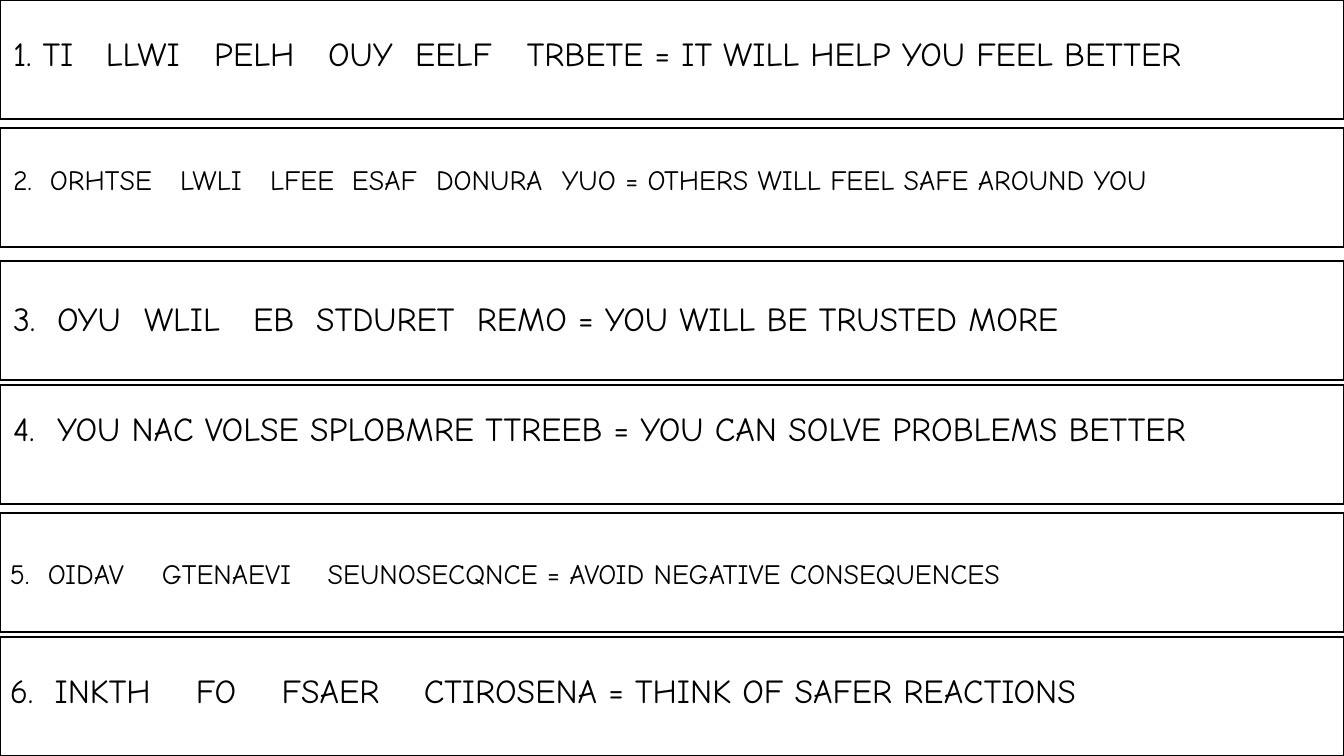
from dataclasses import dataclass

from lxml import etree
from pptx import Presentation
from pptx.dml.color import RGBColor
from pptx.enum.shapes import MSO_SHAPE
from pptx.enum.text import MSO_AUTO_SIZE
from pptx.oxml.ns import qn
from pptx.util import Cm, Pt

RECTANGLE = MSO_SHAPE.RECTANGLE
GROW_TO_FIT = MSO_AUTO_SIZE.SHAPE_TO_FIT_TEXT


@dataclass(frozen=True)
class Theme:
    font: str = "Comic Neue"
    ink: RGBColor = RGBColor(0x00, 0x00, 0x00)
    paper: RGBColor = RGBColor(0xFF, 0xFF, 0xFF)
    large: Pt = Pt(24)
    small: Pt = Pt(20)
    border: Pt = Pt(1)


theme = Theme()
SLIDE_WIDTH, SLIDE_HEIGHT = Cm(33.87), Cm(19.05)
STRIP_HEIGHT = Cm(3)
TEXT_HEIGHT = Cm(1.27)

# Each row: strip top, text left, text top, type size, tab stops (cm), text
ROWS = [
    (0, 0.08, 0.71, theme.large, [2.34, 5.07, 7.94, 10.13, 12.95],
     "1. TI\tLLWI\tPELH\tOUY\tEELF\tTRBETE = IT WILL HELP YOU FEEL BETTER"),
    (3.23, 0.08, 3.97, theme.small, [0.93, 4.21, 6.48, 8.54, 10.66, 13.83],
     "2.\tORHTSE\tLWLI\tLFEE\tESAF\tDONURA\tYUO = OTHERS WILL FEEL SAFE AROUND YOU"),
    (6.58, 0.08, 7.37, theme.large, [1.11, 3.3, 6.05, 7.64, 11.69],
     "3.\tOYU\tWLIL\tEB\tSTDURET\tREMO = YOU WILL BE TRUSTED MORE"),
    (9.7, 0.08, 10.16, theme.large, [1.11],
     "4.\tYOU NAC VOLSE SPLOBMRE TTREEB = YOU CAN SOLVE PROBLEMS BETTER"),
    (12.93, 0, 13.9, theme.small, [0.96, 3.83, 8.01],
     "5.\tOIDAV\tGTENAEVI\tSEUNOSECQNCE = AVOID NEGATIVE CONSEQUENCES"),
    (16.05, 0, 16.76, theme.large, [1.13, 4.69, 6.85, 10.43],
     "6.\tINKTH\tFO\tFSAER\tCTIROSENA = THINK OF SAFER REACTIONS"),
]


def set_tab_stops(paragraph, stops):
    tab_list = etree.SubElement(paragraph._p.get_or_add_pPr(), qn("a:tabLst"))
    for stop in stops:
        etree.SubElement(tab_list, qn("a:tab"), pos=str(int(Cm(stop))), algn="l")


presentation = Presentation()
presentation.slide_width, presentation.slide_height = SLIDE_WIDTH, SLIDE_HEIGHT
slide = presentation.slides.add_slide(presentation.slide_layouts[6])

# Bordered strips
for strip_top, *_ in ROWS:
    strip = slide.shapes.add_shape(RECTANGLE, 0, Cm(strip_top), SLIDE_WIDTH, STRIP_HEIGHT)
    strip.shadow.inherit = False
    strip.fill.solid()
    strip.fill.fore_color.rgb = theme.paper
    strip.line.color.rgb = theme.ink
    strip.line.width = theme.border

# Scrambled sentences with their answers
for _, text_left, text_top, size, stops, text in ROWS:
    text_box = slide.shapes.add_textbox(Cm(text_left), Cm(text_top), SLIDE_WIDTH, TEXT_HEIGHT)
    text_box.text_frame.word_wrap = True
    text_box.text_frame.auto_size = GROW_TO_FIT
    paragraph = text_box.text_frame.paragraphs[0]
    set_tab_stops(paragraph, stops)
    run = paragraph.add_run()
    run.text = text
    for name, value in {"name": theme.font, "size": size}.items():
        setattr(run.font, name, value)
    run.font.color.rgb = theme.ink

presentation.save("out.pptx")
